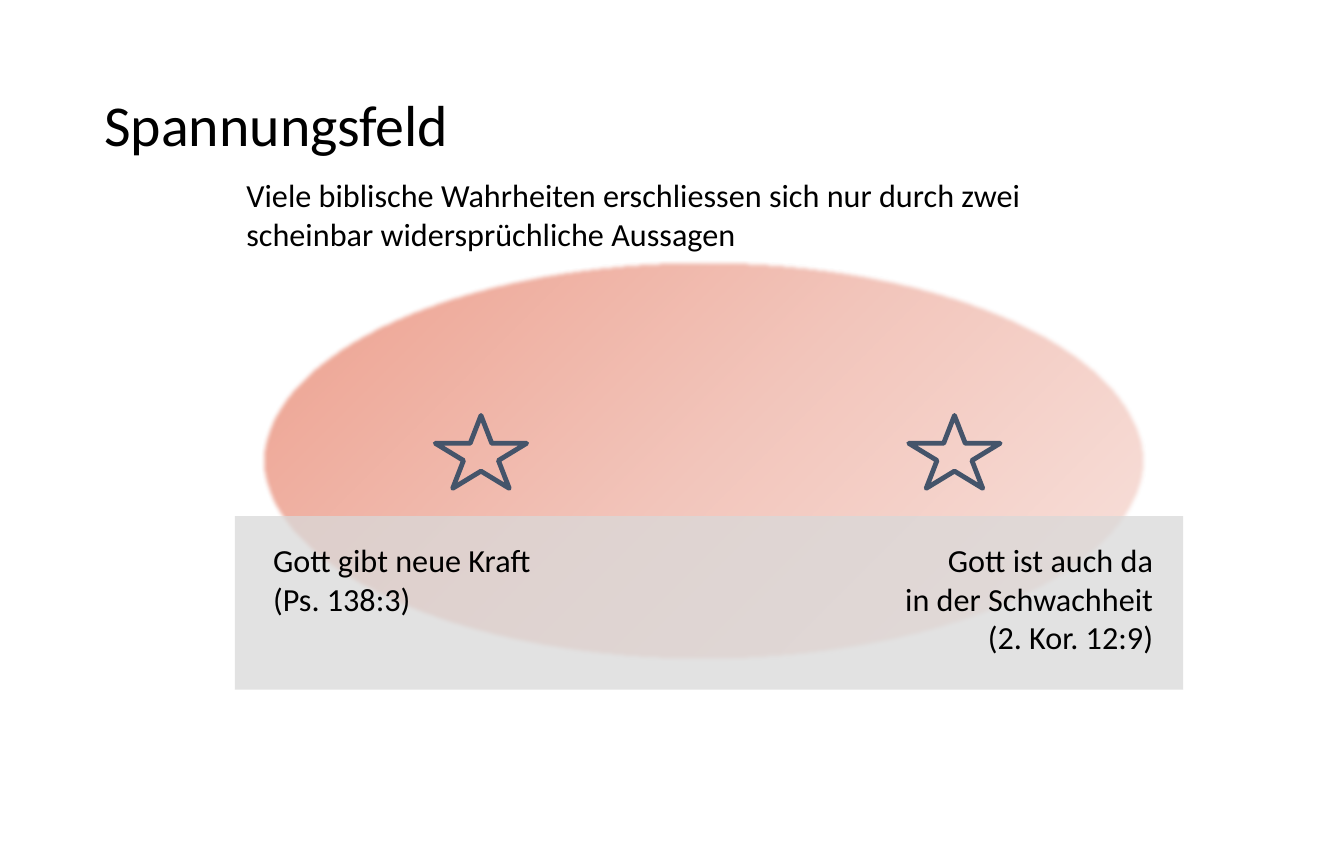
from copy import deepcopy

from lxml.etree import SubElement
from pptx import Presentation
from pptx.dml.color import RGBColor
from pptx.enum.shapes import MSO_SHAPE
from pptx.enum.text import MSO_ANCHOR, MSO_AUTO_SIZE, PP_ALIGN
from pptx.oxml.ns import qn
from pptx.util import Pt

EMU_PER_PX = 9144
FONT = "Calibri"
BLACK = RGBColor(0x00, 0x00, 0x00)
SLATE = RGBColor(0x44, 0x54, 0x6A)
GREY = RGBColor(0xD9, 0xD9, 0xD9)
FIELD_COLOURS = [
    RGBColor(0xED, 0xA0, 0x8E),
    RGBColor(0xF2, 0xC5, 0xBB),
    RGBColor(0xF8, 0xE3, 0xDE),
]


def px(*lengths):
    return [length * EMU_PER_PX for length in lengths]


def write_text(frame, text, size=20, align=PP_ALIGN.LEFT, anchor=MSO_ANCHOR.TOP,
               line_spacing=None, auto_size=MSO_AUTO_SIZE.SHAPE_TO_FIT_TEXT):
    frame.word_wrap = True
    frame.auto_size = auto_size
    frame.vertical_anchor = anchor
    para = frame.paragraphs[0]
    para.text = text
    para.alignment = align
    para.line_spacing = line_spacing
    for span in para.runs:
        span.font.name = FONT
        span.font.size = Pt(size)
        span.font.color.rgb = BLACK


def add_title(page, text, place):
    title = page.shapes.title
    title.left, title.top, title.width, title.height = px(*place)
    write_text(title.text_frame, text, size=36, anchor=MSO_ANCHOR.MIDDLE,
               line_spacing=0.9, auto_size=MSO_AUTO_SIZE.NONE)


def add_text(shapes, text, place, **text_format):
    box = shapes.add_textbox(*px(*place))
    write_text(box.text_frame, text, **text_format)


def add_plain_shape(shapes, kind, place):
    shape = shapes.add_shape(kind, *px(*place))
    shape.shadow.inherit = False
    shape.line.fill.background()
    return shape


def add_field(page, place):
    field = add_plain_shape(page.shapes, MSO_SHAPE.OVAL, place)
    field.fill.gradient()
    field.fill.gradient_angle = 315
    properties = field._element.spPr
    stop_list = properties.find(qn("a:gradFill")).find(qn("a:gsLst"))
    stop_list.append(deepcopy(stop_list[-1]))
    for index, (stop, colour) in enumerate(zip(field.fill.gradient_stops, FIELD_COLOURS)):
        stop.position = index / 2
        stop.color.rgb = colour
    SubElement(properties.find(qn("a:effectLst")), qn("a:softEdge"), rad="31750")


def add_star(page, left):
    star = add_plain_shape(page.shapes, MSO_SHAPE.STAR_5_POINT, (left, 359, 79, 63))
    star.fill.background()
    star.line.color.rgb = SLATE
    star.line.width = Pt(3)


def add_panel(shapes, place):
    panel = add_plain_shape(shapes, MSO_SHAPE.RECTANGLE, place)
    panel.fill.solid()
    panel.fill.fore_color.rgb = GREY
    colour = panel._element.spPr.find(qn("a:solidFill"))[0]
    SubElement(colour, qn("a:alpha"), val="75000")


def main():
    deck = Presentation()
    deck.slide_width, deck.slide_height = px(1161, 750)
    page = deck.slides.add_slide(deck.slide_layouts[5])

    add_title(page, "Spannungsfeld", (80, 69, 1046, 82))
    add_field(page, (226, 225, 764, 347))
    for left in (376, 785):
        add_star(page, left)

    statements = page.shapes.add_group_shape().shapes
    add_panel(statements, (203, 446, 819, 150))
    add_text(statements, "Gott gibt neue Kraft\v(Ps. 138:3)", (226, 462, 331, 77))
    add_text(statements, "Gott ist auch da\vin der Schwachheit\v(2. Kor. 12:9)",
             (675, 462, 331, 111), align=PP_ALIGN.RIGHT)

    add_text(page.shapes,
             "Viele biblische Wahrheiten erschliessen sich nur durch zwei "
             "scheinbar widersprüchliche Aussagen",
             (203, 147, 788, 77))
    deck.save("out.pptx")


if __name__ == "__main__":
    main()
